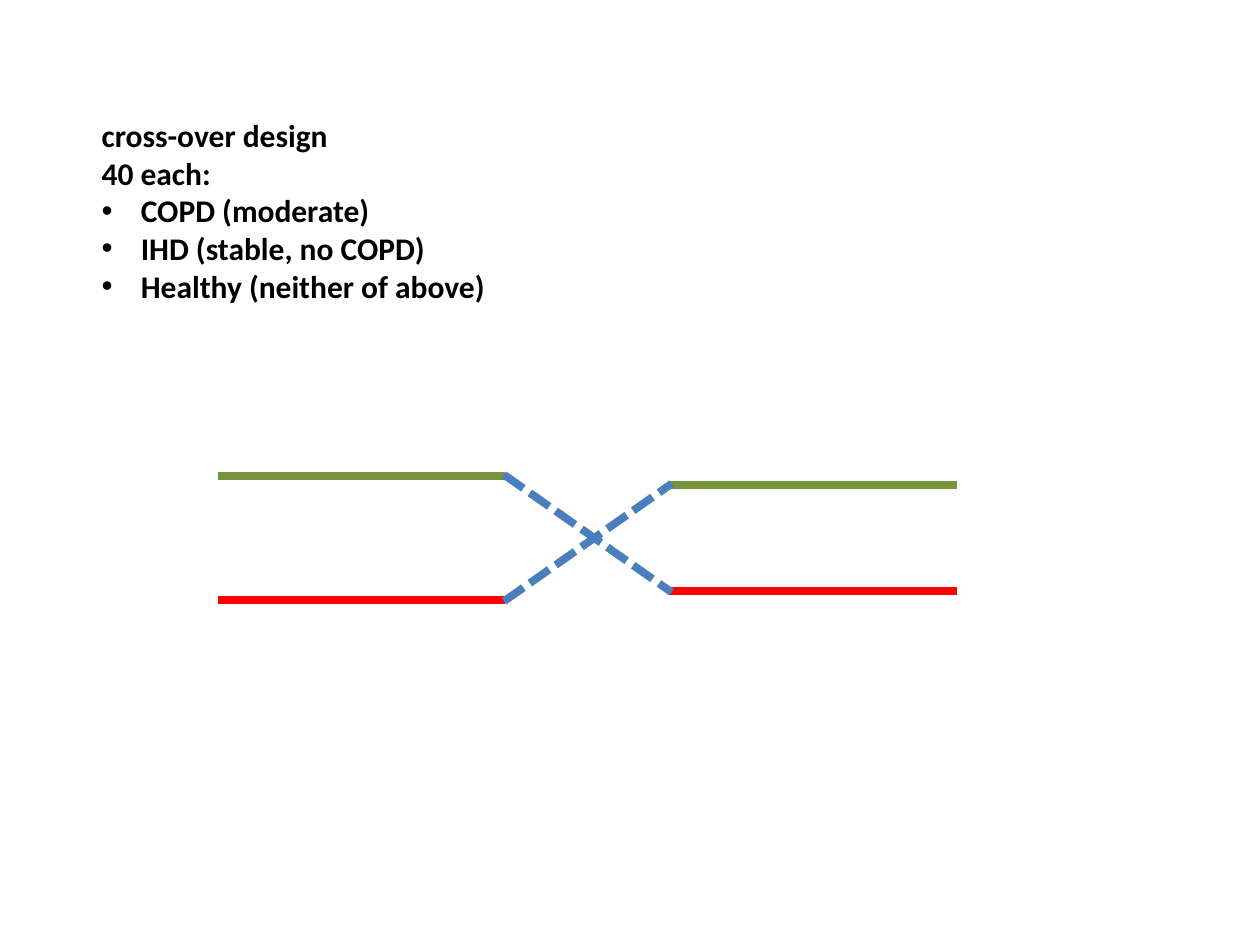
from lxml import etree
from pptx import Presentation
from pptx.dml.color import RGBColor
from pptx.enum.dml import MSO_LINE
from pptx.enum.shapes import MSO_CONNECTOR
from pptx.enum.text import MSO_AUTO_SIZE
from pptx.oxml.ns import qn
from pptx.util import Cm, Pt

BLACK = RGBColor(0x00, 0x00, 0x00)
GREEN = RGBColor(0x77, 0x93, 0x3C)
RED = RGBColor(0xFF, 0x00, 0x00)
BLUE = RGBColor(0x4B, 0x7E, 0xBC)

STRAIGHT = MSO_CONNECTOR.STRAIGHT
SYS_DASH = MSO_LINE.SQUARE_DOT
FIT_SHAPE = MSO_AUTO_SIZE.SHAPE_TO_FIT_TEXT

BLANK_LAYOUT = 6
PERIOD_1 = (4.39, 10.19)
PERIOD_2 = (13.49, 19.3)
SWITCH = (10.16, 13.54)
OVERLAP = 0.03


class SlideBuilder:
    font = "Calibri"
    size = Pt(18)
    line_width = Pt(4.5)
    indent = Cm(0.79)

    def __init__(self, s):
        self.s = s

    def line(self, shapes, x1, y1, x2, y2, color, dash=None):
        c = shapes.add_connector(STRAIGHT, Cm(x1), Cm(y1), Cm(x2), Cm(y2))
        c.line.color.rgb = color
        c.line.width = self.line_width
        if dash is not None:
            c.line.dash_style = dash
        etree.SubElement(c._element.spPr, qn("a:effectLst"))

    def arm(self, y1, color1, y2, color2):
        """Group one study arm: first treatment, switch, second treatment."""
        shapes = self.s.shapes.add_group_shape().shapes
        self.line(shapes, PERIOD_1[0], y1, PERIOD_1[1], y1, color1)
        self.line(shapes, PERIOD_2[0], y2, PERIOD_2[1], y2, color2)
        over = OVERLAP if y2 > y1 else -OVERLAP
        self.line(shapes, SWITCH[0], y1 - over, SWITCH[1], y2 + over,
                  BLUE, SYS_DASH)

    def text(self, x, y, w, h, lines, bullets):
        tf = self.s.shapes.add_textbox(Cm(x), Cm(y), Cm(w), Cm(h)).text_frame
        tf.word_wrap = False
        tf.auto_size = FIT_SHAPE
        for i, text in enumerate(lines + bullets):
            p = tf.add_paragraph() if i else tf.paragraphs[0]
            if i >= len(lines):
                self.bullet(p)
            r = p.add_run()
            r.text = text
            r.font.name = self.font
            r.font.size = self.size
            r.font.bold = True
            r.font.color.rgb = BLACK

    def bullet(self, p):
        pPr = p._p.get_or_add_pPr()
        pPr.set("marL", str(self.indent))
        pPr.set("indent", str(-self.indent))
        etree.SubElement(pPr, qn("a:buFont"), typeface="Arial")
        etree.SubElement(pPr, qn("a:buChar"), char="•")


def main():
    prs = Presentation()
    prs.slide_width, prs.slide_height = Cm(25.4), Cm(19.05)
    slide = SlideBuilder(prs.slides.add_slide(prs.slide_layouts[BLANK_LAYOUT]))

    slide.arm(9.6, GREEN, 11.91, RED)
    slide.arm(12.09, RED, 9.78, GREEN)
    slide.text(1.8, 2.21, 8.31, 4.11,
               ["cross-over design", "40 each:"],
               ["COPD (moderate)", "IHD (stable, no COPD)",
                "Healthy (neither of above)"])

    prs.save("out.pptx")


if __name__ == "__main__":
    main()
